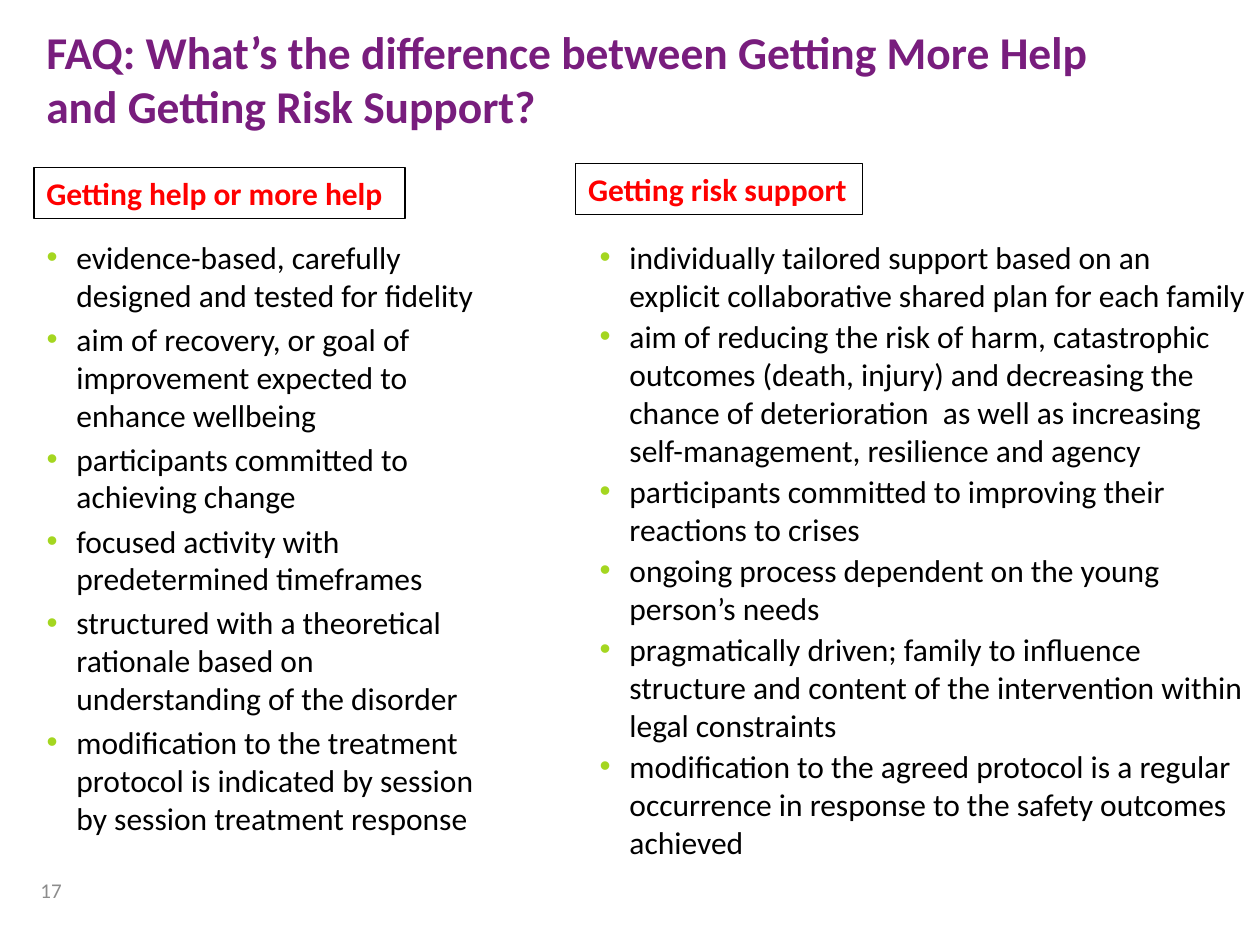
"""Builds the FAQ slide comparing getting more help with getting risk support."""
from lxml import etree
from pptx import Presentation
from pptx import util as u
from pptx.dml.color import RGBColor
from pptx.enum import shapes, text
from pptx.oxml.ns import qn

HUES = {"title": "781D7D", "head": "FF0000", "body": "000000",
        "dot": "A4D620", "page": "8C8C8C", "line": "000000"}

HELP = [
    "evidence-based, carefully designed and tested for fidelity",
    "aim of recovery, or goal of improvement expected to enhance wellbeing",
    "participants committed to achieving change",
    "focused activity with predetermined timeframes",
    "structured with a theoretical rationale based on  understanding of the disorder",
    "modification to the treatment protocol is indicated by session by session treatment response",
]
RISK = [
    "individually tailored support based on an explicit collaborative shared plan for each family",
    "aim of reducing the risk of harm, catastrophic outcomes (death, injury) and decreasing the "
    "chance of deterioration  as well as increasing self-management, resilience and agency",
    "participants committed to improving their reactions to crises",
    "ongoing process dependent on the young person’s needs",
    "pragmatically driven; family to influence structure and content of the intervention "
    "within legal constraints",
    "modification to the agreed protocol is a regular occurrence in response to the safety "
    "outcomes achieved",
]


def style(item, **vals):
    for key, val in vals.items():
        setattr(item, key, val)


def write(para, words, hue, size, bold=False):
    run = para.add_run()
    run.text = words
    style(run.font, name="Calibri", size=u.Pt(size), bold=bold)
    run.font.color.rgb = RGBColor.from_string(HUES[hue])


def add_text(slide, area, words, hue, size, **vals):
    frame = slide.shapes.add_textbox(*map(u.Pt, area)).text_frame
    style(frame, word_wrap=True, **vals)
    write(frame.paragraphs[0], words, hue, size, hue == "title")
    return frame


def add_head(slide, area, words):
    box = slide.shapes.add_shape(shapes.MSO_SHAPE.RECTANGLE, *map(u.Pt, area))
    box.shadow.inherit = False
    box.fill.background()
    box.line.color.rgb = RGBColor.from_string(HUES["line"])
    box.line.width = u.Pt(0.75)
    frame = box.text_frame
    style(frame, word_wrap=False, auto_size=text.MSO_AUTO_SIZE.SHAPE_TO_FIT_TEXT,
          vertical_anchor=text.MSO_ANCHOR.TOP)
    para = frame.paragraphs[0]
    para.alignment = text.PP_ALIGN.LEFT
    write(para, words, "head", 18, True)


def add_dot(para):
    props = para._p.get_or_add_pPr()
    props.set("marL", str(u.Pt(27.2)))
    props.set("indent", str(u.Pt(-17)))
    hue = etree.SubElement(props, qn("a:buClr"))
    etree.SubElement(hue, qn("a:srgbClr"), val=HUES["dot"])
    etree.SubElement(props, qn("a:buFont"), typeface="Arial")
    etree.SubElement(props, qn("a:buChar"), char="•")


def add_list(slide, area, items, gap):
    frame = slide.shapes.add_textbox(*map(u.Pt, area)).text_frame
    frame.word_wrap = True
    for num, item in enumerate(items):
        para = frame.add_paragraph() if num else frame.paragraphs[0]
        para.space_before = u.Pt(gap)
        add_dot(para)
        write(para, item, "body", 18)


def main():
    deck = Presentation()
    style(deck, slide_width=u.Pt(720), slide_height=u.Pt(540))
    slide = deck.slides.add_slide(deck.slide_layouts[6])
    page = add_text(slide, (8.6, 494, 33.8, 28.8), "17", "page", 12,
                    vertical_anchor=text.MSO_ANCHOR.MIDDLE)
    page.paragraphs[0].alignment = text.PP_ALIGN.RIGHT
    add_text(slide, (19.4, 10, 637, 82),
             "FAQ: What’s the difference between Getting More Help and Getting Risk Support?",
             "title", 26)
    add_head(slide, (19.4, 95.8, 212, 29), "Getting help or more help")
    add_head(slide, (329, 93.5, 164, 29), "Getting risk support")
    add_list(slide, (9.4, 132.5, 287, 352), HELP, 3.6)
    add_list(slide, (325.4, 132.5, 394.6, 374), RISK, 2)
    deck.save("out.pptx")


if __name__ == "__main__":
    main()
